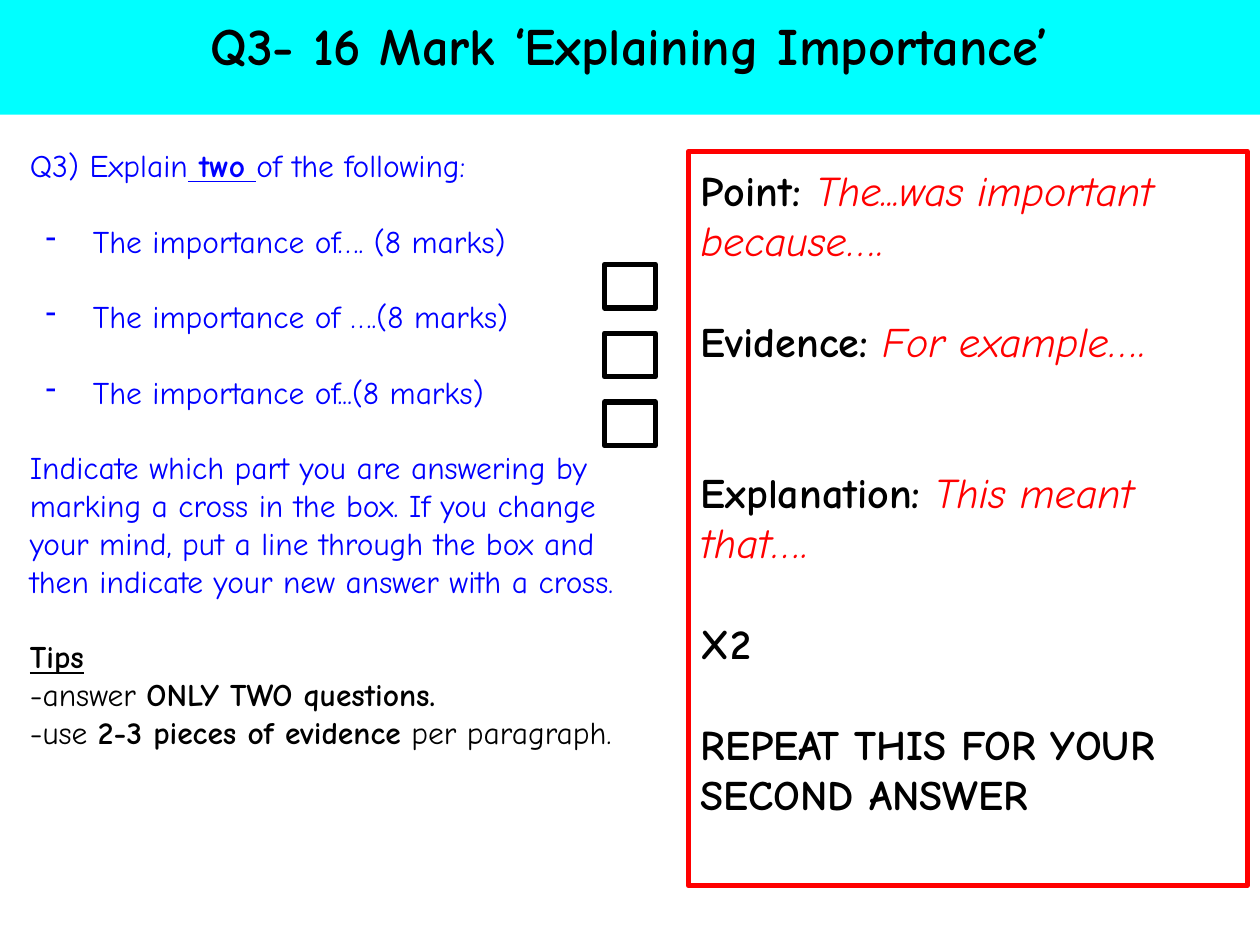
from lxml import etree
from pptx import Presentation
from pptx.dml.color import RGBColor
from pptx.enum.shapes import MSO_SHAPE
from pptx.enum.text import MSO_ANCHOR, PP_ALIGN
from pptx.oxml.ns import qn
from pptx.util import Pt

RECTANGLE = MSO_SHAPE.RECTANGLE
TOP, LEFT, CENTER = MSO_ANCHOR.TOP, PP_ALIGN.LEFT, PP_ALIGN.CENTER
CYAN = RGBColor(0x00, 0xFF, 0xFF)
BLUE = RGBColor(0x00, 0x00, 0xFF)
RED = RGBColor(0xFF, 0x00, 0x00)
BLACK = RGBColor(0x00, 0x00, 0x00)
FONT = "Comic Neue"
LINE_HEIGHT = 1.2  # line pitch as a multiple of the text size
INSET = 7.2

# Run styles: colour, bold, italic, underline
STYLES = {
    "question": (BLUE, False, False, False),
    "key": (BLUE, True, False, True),
    "heading": (BLACK, True, False, True),
    "plain": (BLACK, False, False, False),
    "strong": (BLACK, True, False, False),
    "starter": (RED, False, True, False),
}

# Each paragraph: blank lines of space above, bulleted, runs of (text, style)
TITLE = [(0, False, [("Q3- 16 Mark ‘Explaining Importance’", "strong")])]
QUESTION = [
    (0, False, [("Q3) Explain", "question"), (" two ", "key"),
                ("of the following:", "question")]),
    (1, True, [("The importance of…. (8 marks)", "question")]),
    (1, True, [("The importance of ….(8 marks)", "question")]),
    (1, True, [("The importance of...(8 marks)", "question")]),
    (1, False, [("Indicate which part you are answering by marking a cross in "
                 "the box. If you change your mind, put a line through the box "
                 "and then indicate your new answer with a cross.", "question")]),
    (1, False, [("Tips", "heading")]),
    (0, False, [("-answer ", "plain"), ("ONLY TWO questions.", "strong")]),
    (0, False, [("-use ", "plain"), ("2-3 pieces of evidence", "strong"),
                (" per paragraph.", "plain")]),
]
ANSWER_FRAME = [
    (0, False, [("Point: ", "strong"),
                ("The...was important because….", "starter")]),
    (1, False, [("Evidence:", "strong"), (" For example….", "starter")]),
    (2, False, [("Explanation:", "strong"), (" This meant that….", "starter")]),
    (1, False, [("X2", "strong")]),
    (1, False, [("REPEAT THIS FOR YOUR SECOND ANSWER", "strong")]),
]

# Places in points: left, top, width, height
TITLE_BAND = (0, 0, 720, 65.5)
QUESTION_AREA = (10, 76.3, 358.5, 440)
ANSWER_AREA = (393.3, 86.5, 319.5, 419.5)
TICK_BOX = (345.5, 151, 29, 25)
TICK_BOX_COUNT, TICK_BOX_PITCH = 3, 39.4


def add_bullet(paragraph):
    properties = paragraph._p.get_or_add_pPr()
    properties.set("marL", str(Pt(36)))
    properties.set("indent", str(-Pt(27)))
    color = etree.SubElement(properties, qn("a:buClr"))
    etree.SubElement(color, qn("a:srgbClr"), val=str(BLUE))
    etree.SubElement(properties, qn("a:buChar"), char="-")


def write_text(shape, paragraphs, size, alignment=LEFT):
    frame = shape.text_frame
    frame.word_wrap = True
    frame.vertical_anchor = TOP
    frame.margin_left = frame.margin_right = Pt(INSET)
    frame.margin_top = frame.margin_bottom = Pt(INSET)
    for index, (gap, bulleted, runs) in enumerate(paragraphs):
        paragraph = frame.add_paragraph() if index else frame.paragraphs[0]
        paragraph.alignment = alignment
        paragraph.space_before = Pt(gap * size * LINE_HEIGHT)
        if bulleted:
            add_bullet(paragraph)
        for text, style in runs:
            run = paragraph.add_run()
            run.text = text
            font = run.font
            font.name, font.size = FONT, Pt(size)
            font.color.rgb, font.bold, font.italic, font.underline = STYLES[style]


def add_rectangle(slide, place, fill=None, line=None):
    shape = slide.shapes.add_shape(RECTANGLE, *map(Pt, place))
    shape.shadow.inherit = False
    if fill is None:
        shape.fill.background()
    else:
        shape.fill.solid()
        shape.fill.fore_color.rgb = fill
    if line is None:
        shape.line.fill.background()
    else:
        shape.line.color.rgb = line
        shape.line.width = Pt(3)
    return shape


def main():
    presentation = Presentation()
    presentation.slide_width, presentation.slide_height = Pt(720), Pt(540)
    slide = presentation.slides.add_slide(presentation.slide_layouts[6])

    # Title band
    write_text(add_rectangle(slide, TITLE_BAND, fill=CYAN), TITLE, 30, CENTER)

    # Question and tips
    question_box = slide.shapes.add_textbox(*map(Pt, QUESTION_AREA))
    write_text(question_box, QUESTION, 18)

    # Tick boxes
    left, top, width, height = TICK_BOX
    for index in range(TICK_BOX_COUNT):
        place = (left, top + index * TICK_BOX_PITCH, width, height)
        add_rectangle(slide, place, line=BLACK)

    # Answer frame
    write_text(add_rectangle(slide, ANSWER_AREA, line=RED), ANSWER_FRAME, 24)

    presentation.save("out.pptx")


if __name__ == "__main__":
    main()
